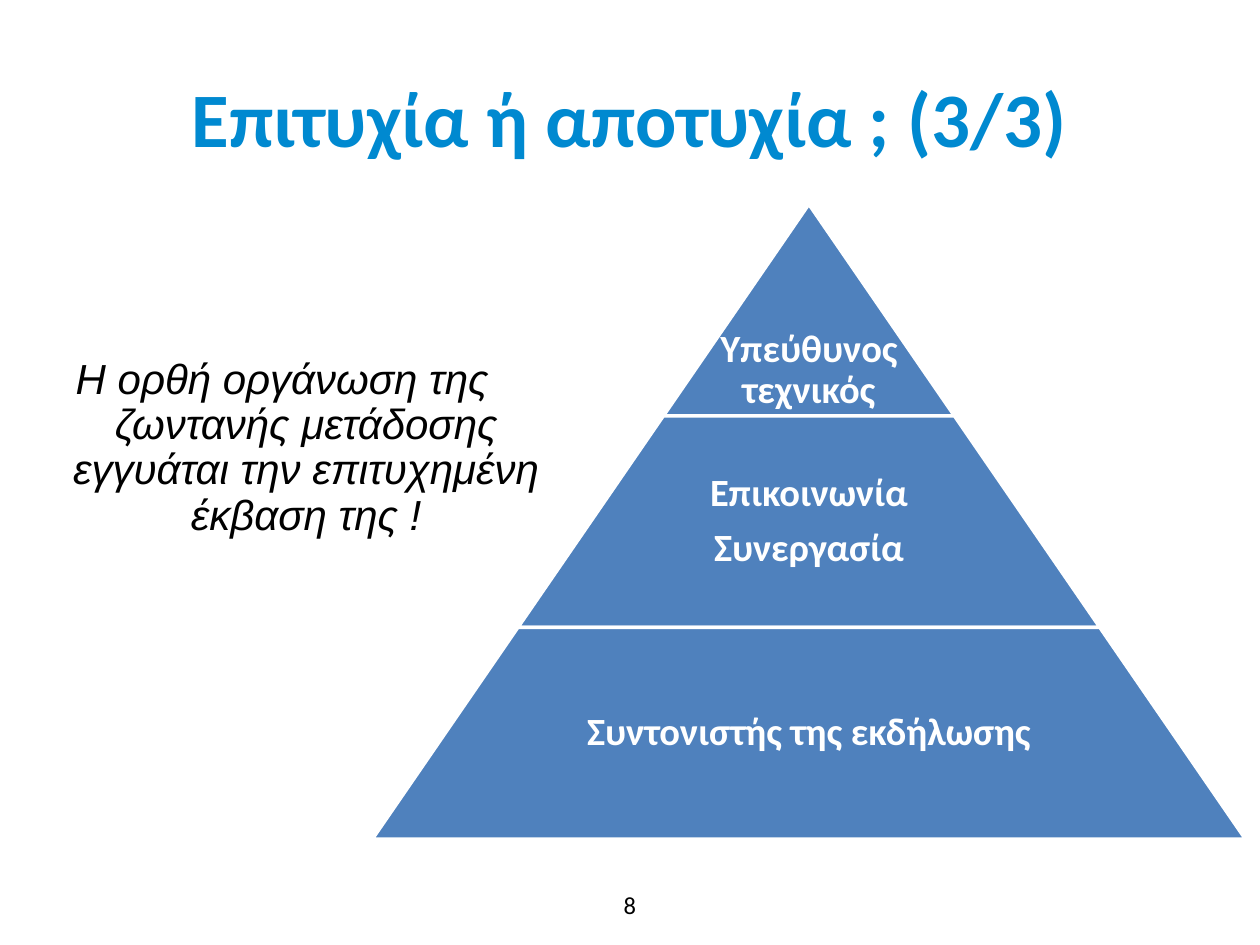
from dataclasses import dataclass

from pptx import Presentation
from pptx.dml.color import RGBColor
from pptx.enum.shapes import MSO_SHAPE as Shape
from pptx.enum.text import MSO_ANCHOR as Anchor, PP_ALIGN as Align
from pptx.util import Inches, Pt


@dataclass(frozen=True)
class Theme:
    heading_font: str = "Calibri"
    body_font: str = "Arial"
    title_color: RGBColor = RGBColor(0x00, 0x89, 0xD0)
    text_color: RGBColor = RGBColor(0x00, 0x00, 0x00)
    level_color: RGBColor = RGBColor(0x4F, 0x81, 0xBD)
    white: RGBColor = RGBColor(0xFF, 0xFF, 0xFF)
    title_size: int = 44
    body_size: int = 24
    level_size: int = 22
    number_size: int = 14


THEME = Theme()

PYRAMID_CENTER = 6.42
PYRAMID_TOP = 1.62
LEVEL_HEIGHT = 1.68
LEVEL_STEP = 2.31  # each level is this much wider than the one above
LEVEL_SLOPE = LEVEL_STEP / 2 / LEVEL_HEIGHT

# Lines, share of the level's width given to text, vertical anchor
LEVELS = [
    (["Υπεύθυνος τεχνικός"], 1, Anchor.BOTTOM),
    (["Επικοινωνία", "Συνεργασία"], 0.65, Anchor.MIDDLE),
    (["Συντονιστής της εκδήλωσης"], 0.65, Anchor.MIDDLE),
]


def add_text(shapes, box, lines, size, color, font=THEME.heading_font,
             bold=False, italic=False, anchor=Anchor.MIDDLE, inset=None):
    """Add a centred text box and return its paragraphs."""
    frame = shapes.add_textbox(*map(Inches, box)).text_frame
    frame.word_wrap = True
    frame.vertical_anchor = anchor
    if inset is not None:
        frame.margin_left = frame.margin_right = Inches(inset)
        frame.margin_top = frame.margin_bottom = Inches(inset)
    frame.text = "\n".join(lines)
    for paragraph in frame.paragraphs:
        paragraph.alignment = Align.CENTER
        paragraph.font.name = font
        paragraph.font.size = Pt(size)
        paragraph.font.color.rgb = color
        paragraph.font.bold = bold
        paragraph.font.italic = italic
    return frame.paragraphs


def add_statement(slide):
    text = "Η ορθή οργάνωση της ζωντανής μετάδοσης εγγυάται την επιτυχημένη έκβαση της !"
    paragraph = add_text(slide.shapes, (-0.1, 2.79, 4.68, 2.15), [text],
                         THEME.body_size, THEME.text_color, THEME.body_font,
                         italic=True, anchor=Anchor.TOP)[0]
    paragraph.line_spacing = 0.9
    paragraph.space_before = Pt(12)
    properties = paragraph._p.get_or_add_pPr()
    properties.set("marL", str(Inches(0.38)))
    properties.set("indent", str(Inches(-0.38)))


def add_level(shapes, index, lines, text_share, anchor):
    width = LEVEL_STEP * (index + 1)
    top = PYRAMID_TOP + LEVEL_HEIGHT * index

    def centered_box(box_width):
        return PYRAMID_CENTER - box_width / 2, top, box_width, LEVEL_HEIGHT

    level = shapes.add_shape(Shape.TRAPEZOID, *map(Inches, centered_box(width)))
    level.adjustments[0] = LEVEL_SLOPE
    level.shadow.inherit = False
    level.fill.solid()
    level.fill.fore_color.rgb = THEME.level_color
    level.line.color.rgb = THEME.white
    level.line.width = Pt(2)

    paragraphs = add_text(shapes, centered_box(width * text_share), lines,
                          THEME.level_size, THEME.white, bold=True,
                          anchor=anchor, inset=0.03)
    for paragraph in paragraphs:
        paragraph.line_spacing = 0.9
    for paragraph in paragraphs[:-1]:
        paragraph.space_after = Pt(0.35 * THEME.level_size)


def add_pyramid(slide):
    group = slide.shapes.add_group_shape()
    for index, (lines, text_share, anchor) in enumerate(LEVELS):
        add_level(group.shapes, index, lines, text_share, anchor)


def main():
    presentation = Presentation()
    presentation.slide_width = Inches(10)
    presentation.slide_height = Inches(7.5)
    slide = presentation.slides.add_slide(presentation.slide_layouts[6])

    add_text(slide.shapes, (0.5, 0.3, 9, 1.25), ["Επιτυχία ή αποτυχία ; (3/3)"],
             THEME.title_size, THEME.title_color, bold=True)
    add_statement(slide)
    add_text(slide.shapes, (0.12, 6.98, 9.76, 0.4), ["8"],
             THEME.number_size, THEME.text_color)
    add_pyramid(slide)
    presentation.save("out.pptx")


if __name__ == "__main__":
    main()
